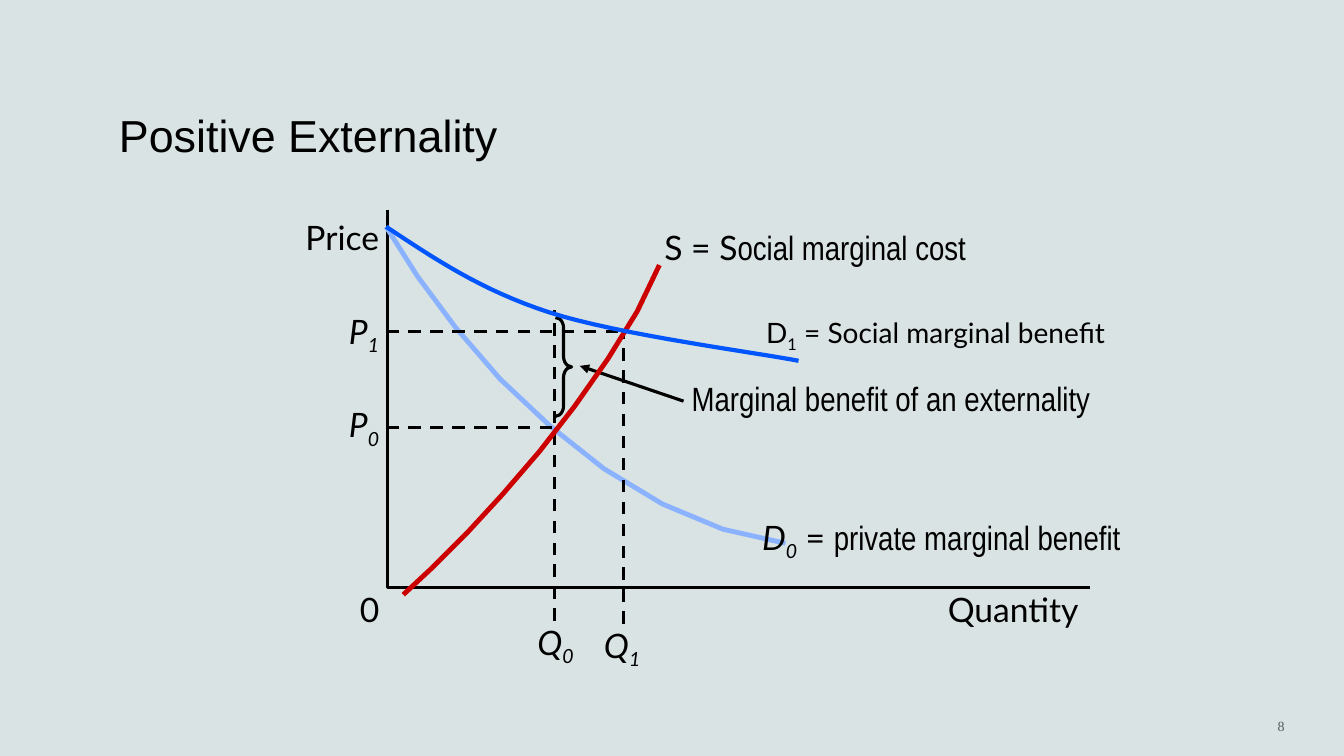
from lxml import etree
from pptx import Presentation
from pptx.dml.color import RGBColor
from pptx.enum.dml import MSO_LINE
from pptx.enum.shapes import MSO_CONNECTOR, MSO_SHAPE
from pptx.enum.text import MSO_ANCHOR, MSO_AUTO_SIZE, PP_ALIGN
from pptx.oxml.ns import qn
from pptx.util import Inches, Pt

STRAIGHT = MSO_CONNECTOR.STRAIGHT
RIGHT_BRACE = MSO_SHAPE.RIGHT_BRACE
DASH = MSO_LINE.DASH
LEFT, RIGHT = PP_ALIGN.LEFT, PP_ALIGN.RIGHT
TOP, MIDDLE, BOTTOM = MSO_ANCHOR.TOP, MSO_ANCHOR.MIDDLE, MSO_ANCHOR.BOTTOM
NO_FIT, GROW = MSO_AUTO_SIZE.NONE, MSO_AUTO_SIZE.SHAPE_TO_FIT_TEXT

BACKGROUND = RGBColor(0xDA, 0xE3, 0xE3)
BLACK = RGBColor(0x00, 0x00, 0x00)
GREY = RGBColor(0x57, 0x5B, 0x5B)
LIGHT_BLUE = RGBColor(0x8B, 0xB2, 0xFF)
BLUE = RGBColor(0x00, 0x55, 0xFE)
RED = RGBColor(0xCC, 0x00, 0x00)

# Run formats
LATO = {"name": "Lato", "size": Pt(24)}
ITALIC = {**LATO, "italic": True}
NARROW = {**LATO, "name": "Arial Narrow"}
SMALL = {**LATO, "size": Pt(20)}
TITLE = {"name": "Arial", "size": Pt(32)}
PAGE = {"name": "Times New Roman", "size": Pt(10), "color": GREY}

# Curves, in inches on the slide
PRIVATE_BENEFIT = [(3.83, 2.25), (4.14, 2.74), (4.52, 3.25), (4.96, 3.76), (5.46, 4.23),
                   (5.99, 4.65), (6.57, 5), (7.17, 5.25), (7.79, 5.39)]
SOCIAL_COST = [(4, 5.9), (4.29, 5.63), (4.63, 5.29), (4.98, 4.91), (5.35, 4.48),
               (5.7, 4.03), (6.03, 3.56), (6.32, 3.09), (6.54, 2.63)]
SOCIAL_BENEFIT = [[(3.83, 2.25), (4.3, 2.56), (4.77, 2.88), (5.45, 3.1)],
                  [(5.45, 3.1), (6.13, 3.32), (7.51, 3.5), (7.92, 3.58)]]
AXES = [(3.84, 2.08), (3.84, 5.83), (10.81, 5.83)]


def write_runs(paragraph, runs):
    """Add (text, format) runs; a third item marks a subscript."""
    for text, run_format, *subscript in runs:
        run = paragraph.add_run()
        run.text = text
        font_format = dict(run_format)
        run.font.color.rgb = font_format.pop("color", BLACK)
        for attribute, value in font_format.items():
            setattr(run.font, attribute, value)
        if subscript:
            run._r.get_or_add_rPr().set("baseline", "-25000")


def add_label(slide, box, runs, align=LEFT, wrap=False, insets=(0, 0), spacing=None,
              anchor=TOP, fit=GROW):
    label = slide.shapes.add_textbox(*map(Inches, box))
    frame = label.text_frame
    side, end = map(Inches, insets)
    settings = {"word_wrap": wrap, "auto_size": fit, "vertical_anchor": anchor,
                "margin_left": side, "margin_right": side,
                "margin_top": end, "margin_bottom": end}
    for attribute, value in settings.items():
        setattr(frame, attribute, value)
    paragraph = frame.paragraphs[0]
    paragraph.alignment = align
    if spacing:
        paragraph.line_spacing = spacing
    write_runs(paragraph, runs)


def add_curve(slide, points, color, width):
    start, *rest = [(Inches(x), Inches(y)) for x, y in points]
    builder = slide.shapes.build_freeform(*start)
    builder.add_line_segments(rest, close=False)
    curve = builder.convert_to_shape()
    curve.shadow.inherit = False
    curve.fill.background()
    curve.line.color.rgb = color
    curve.line.width = Pt(width)


def add_line(slide, start, end, dashed=False, arrow=False):
    line = slide.shapes.add_connector(STRAIGHT, *map(Inches, start + end))
    line.line.color.rgb = BLACK
    line.line.width = Pt(2.25)
    if dashed:
        line.line.dash_style = DASH
    if arrow:
        etree.SubElement(line.line._get_or_add_ln(), qn("a:tailEnd"), type="triangle")
    etree.SubElement(line._element.spPr, qn("a:effectLst"))


def add_brace(slide, box):
    brace = slide.shapes.add_shape(RIGHT_BRACE, *map(Inches, box))
    brace.shadow.inherit = False
    brace.fill.background()
    brace.line.color.rgb = BLACK
    brace.line.width = Pt(2.25)
    brace.adjustments[0] = 0.65


def bezier_points(segments, steps=16):
    """Sample cubic segments that follow one another."""
    points = [segments[0][0]]
    for segment in segments:
        for step in range(1, steps + 1):
            t = step / steps
            weights = ((1 - t) ** 3, 3 * t * (1 - t) ** 2, 3 * t ** 2 * (1 - t), t ** 3)
            points.append(tuple(sum(w * value for w, value in zip(weights, axis))
                                for axis in zip(*segment)))
    return points


def add_title(slide, text):
    title = slide.shapes.title
    place = {"left": 1.08, "top": 0.43, "width": 11.17, "height": 1.22}
    for attribute, value in place.items():
        setattr(title, attribute, Inches(value))
    frame = title.text_frame
    frame.auto_size = NO_FIT
    frame.vertical_anchor = BOTTOM
    frame.paragraphs[0].alignment = LEFT
    write_runs(frame.paragraphs[0], [(text, TITLE)])


def add_equilibrium(slide, index, quantity_box, price_top, upright, level):
    """Dashed guides with the quantity and price they lead to."""
    add_label(slide, quantity_box, [("Q", ITALIC), (index, ITALIC, True)])
    add_label(slide, (3.44, price_top, 0.32, 0.4),
              [("P", ITALIC), (index, ITALIC, True)], RIGHT)
    for start, end in (upright, level):
        add_line(slide, start, end, dashed=True)


def main():
    prs = Presentation()
    prs.slide_width, prs.slide_height = Inches(13.33), Inches(7.5)
    slide = prs.slides.add_slide(prs.slide_layouts[5])
    slide.background.fill.solid()
    slide.background.fill.fore_color.rgb = BACKGROUND

    # Title and page number
    add_title(slide, "Positive Externality")
    add_label(slide, (10.92, 6.95, 1.92, 0.5), [("8", PAGE)], RIGHT, wrap=True,
              insets=(0.1, 0.05), anchor=MIDDLE, fit=NO_FIT)

    # Axes
    add_curve(slide, AXES, BLACK, 2.25)
    for text, box, align in (("Price", (3.02, 2.15, 0.74, 0.4), RIGHT),
                             ("Quantity", (9.4, 5.84, 1.32, 0.4), LEFT),
                             ("0", (3.57, 5.84, 0.19, 0.4), RIGHT)):
        add_label(slide, box, [(text, LATO)], align)

    # Externality note
    add_label(slide, (6.86, 3.83, 4, 0.32), [("Marginal benefit of an externality", NARROW)],
              wrap=True, spacing=0.8)
    add_line(slide, (6.78, 3.98), (5.75, 3.63), arrow=True)

    # Private demand
    add_curve(slide, PRIVATE_BENEFIT, LIGHT_BLUE, 3.5)
    add_label(slide, (7.46, 5.17, 3.86, 0.33),
              [("D", ITALIC), ("0", ITALIC, True), (" = ", LATO),
               ("private marginal benefit", NARROW)], insets=(0.1, 0), spacing=0.8)

    # Private and social equilibrium
    add_equilibrium(slide, "0", (5.33, 6.17, 0.41, 0.4), 4.01,
                    ((5.5, 6.16), (5.5, 4.21)), ((3.83, 4.24), (5.48, 4.24)))
    add_equilibrium(slide, "1", (5.99, 6.2, 0.41, 0.4), 3.08,
                    ((6.18, 6.19), (6.18, 3.3)), ((3.83, 3.29), (6.17, 3.29)))

    # Supply
    add_curve(slide, SOCIAL_COST, RED, 3.5)
    add_label(slide, (6.59, 2.33, 3.06, 0.32),
              [("S = S", LATO), ("ocial marginal cost", NARROW)], spacing=0.8)

    # Gap between the demand curves
    add_brace(slide, (5.51, 3.15, 0.16, 0.98))
    add_line(slide, (5.5, 4.2), (5.5, 3.08), dashed=True)

    # Social demand
    add_curve(slide, bezier_points(SOCIAL_BENEFIT), BLUE, 3)
    add_label(slide, (7.5, 3.08, 4.25, 0.43),
              [("D", SMALL), ("1", SMALL, True), (" = Social marginal benefit", SMALL)],
              wrap=True, insets=(0.1, 0.05))

    prs.save("out.pptx")


if __name__ == "__main__":
    main()
